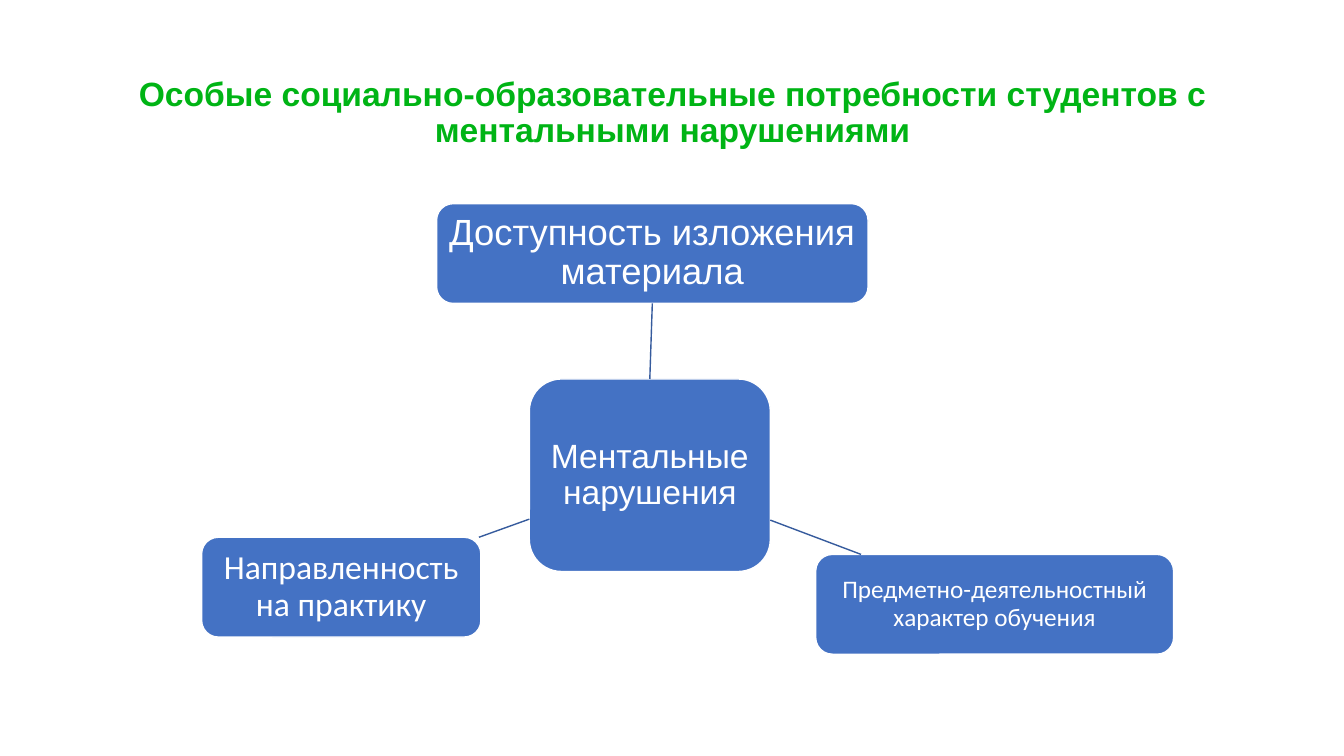
from pptx import Presentation
from pptx.dml.color import RGBColor
from pptx.enum.shapes import MSO_CONNECTOR, MSO_SHAPE
from pptx.enum.text import MSO_ANCHOR, PP_ALIGN
from pptx.oxml.ns import qn
from pptx.util import Inches, Pt
from lxml.etree import SubElement

GREEN = RGBColor(0x00, 0xB4, 0x15)
BLUE = RGBColor(0x44, 0x72, 0xC4)
NAVY = RGBColor(0x36, 0x5B, 0x9D)
WHITE = RGBColor(0xFF, 0xFF, 0xFF)

TOP, BOTTOM = 0, 2
SIDES = ("margin_left", "margin_top", "margin_right", "margin_bottom")


class Board:
    def __init__(self, slide):
        self.slide = slide
        self.frame = {"word_wrap": True, "vertical_anchor": MSO_ANCHOR.MIDDLE}
        self.para = {"alignment": PP_ALIGN.CENTER, "line_spacing": 0.9}

    def style(self, item, values):
        for name, value in values.items():
            setattr(item, name, value)

    def label(self, shape, text, size, font, color, bold=False):
        frame = shape.text_frame
        self.style(frame, self.frame)
        para = frame.paragraphs[0]
        self.style(para, self.para)
        run = para.add_run()
        run.text = text
        self.style(run.font, {"size": Pt(size), "name": font, "bold": bold})
        run.font.color.rgb = color

    def title(self, text, box):
        shape = self.slide.shapes.add_textbox(*map(Inches, box))
        self.label(shape, text, 24, "Arial", GREEN, True)

    def node(self, text, box, size, font, inset=0.07):
        shape = self.slide.shapes.add_shape(
            MSO_SHAPE.ROUNDED_RECTANGLE, *map(Inches, box))
        shape.shadow.inherit = False
        shape.fill.solid()
        shape.fill.fore_color.rgb = BLUE
        shape.line.color.rgb = WHITE
        shape.line.width = Pt(1)
        self.label(shape, text, size, font, WHITE)
        self.style(shape.text_frame, dict.fromkeys(SIDES, Inches(inset)))
        return shape

    def link(self, start, end):
        line = self.slide.shapes.add_connector(
            MSO_CONNECTOR.STRAIGHT, *map(Inches, start + end))
        line.line.color.rgb = NAVY
        line.line.width = Pt(1)
        SubElement(line._element.spPr, qn("a:effectLst"))
        return line


def main():
    deck = Presentation()
    deck.slide_width, deck.slide_height = Inches(13.33), Inches(7.5)
    board = Board(deck.slides.add_slide(deck.slide_layouts[6]))

    board.title("Особые социально-образовательные потребности студентов с "
                "ментальными нарушениями", (0.92, 0.4, 11.5, 1.45))
    core = board.node("Ментальные нарушения", (5.25, 3.76, 2.39, 1.91),
                      24, "Arial")
    access = board.node("Доступность изложения материала",
                        (4.33, 2.02, 4.28, 0.99), 26, "Arial")
    board.node("Предметно-деятельностный характер обучения",
               (8.09, 5.5, 3.55, 0.99), 18, "Calibri", 0.05)
    board.node("Направленность на практику", (2, 5.33, 2.77, 0.99),
               24, "Calibri")

    stem = board.link((6.45, 3.76), (6.47, 3.01))
    stem.begin_connect(core, TOP)
    stem.end_connect(access, BOTTOM)
    board.link((7.64, 5.16), (8.54, 5.5))
    board.link((5.25, 5.15), (4.75, 5.33))

    deck.save("out.pptx")


if __name__ == "__main__":
    main()
